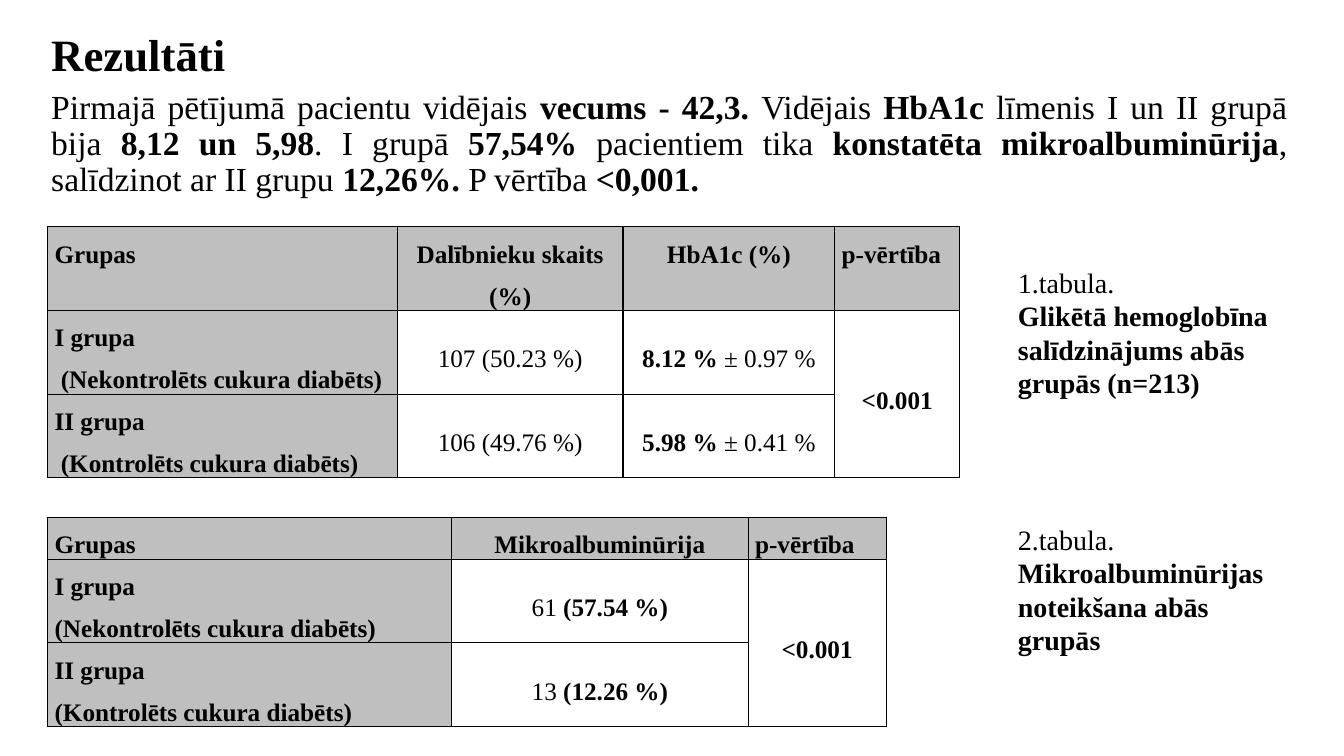
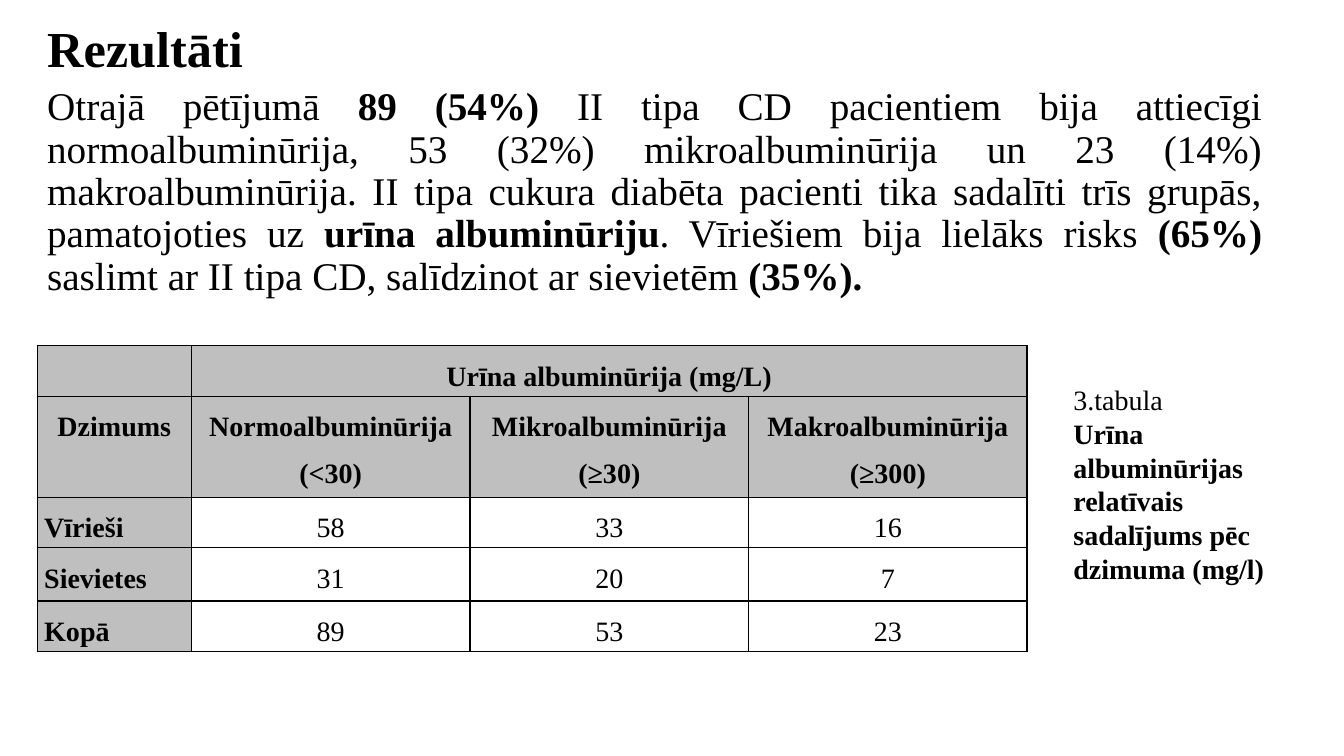
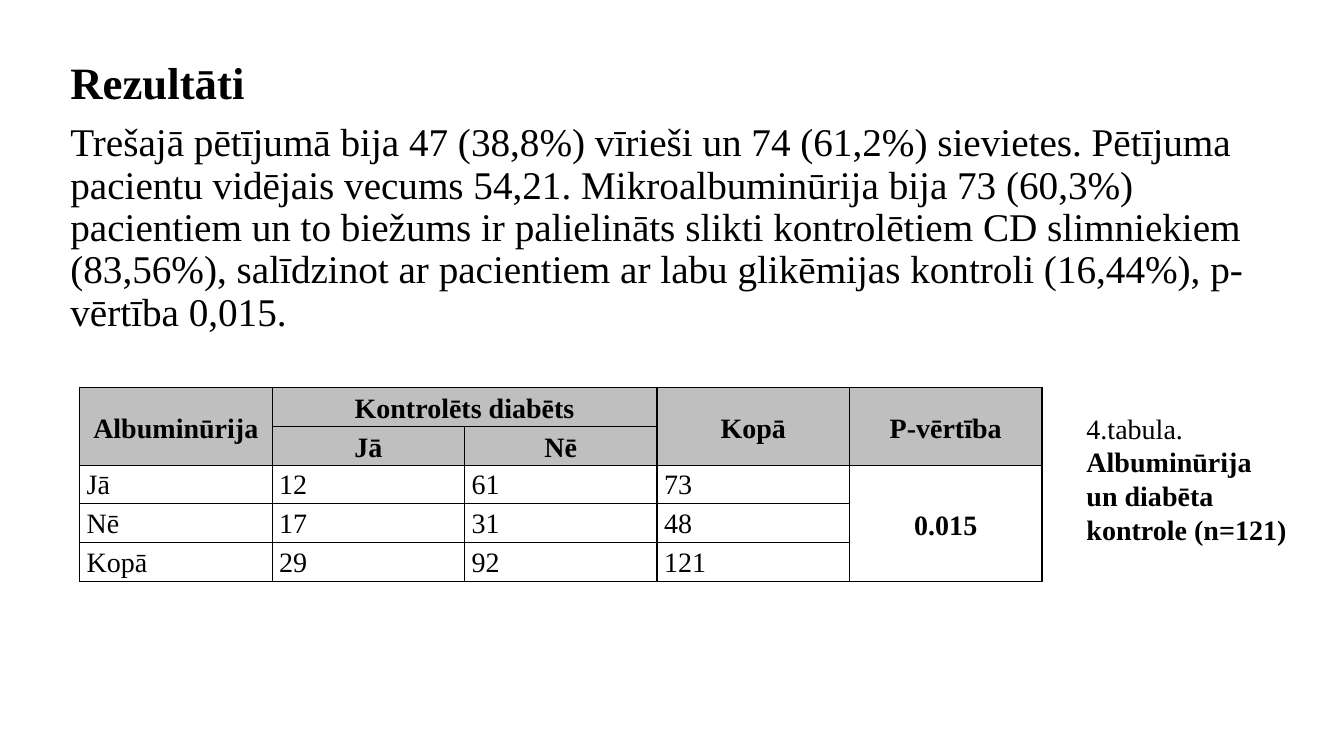
from dataclasses import dataclass
from typing import Any, Optional

from lxml.etree import SubElement
from pptx import Presentation
from pptx.dml.color import RGBColor
from pptx.enum.text import MSO_ANCHOR as Anchor, MSO_AUTO_SIZE as AutoSize, PP_ALIGN as Align
from pptx.oxml.ns import qn
from pptx.util import Pt

BLACK = RGBColor(0, 0, 0)
WHITE = RGBColor(255, 255, 255)
GRAY = RGBColor(0xBF, 0xBF, 0xBF)
FONT = "Times New Roman"
TITLE = "Rezultāti"
BOLD_MARK = "*"
CELL_FORMAT = {"margin_left": Pt(5), "margin_right": Pt(5), "margin_top": 0, "margin_bottom": 0}
PLAIN_TABLE = {"first_row": False, "horz_banding": False}


@dataclass(frozen=True)
class Frame:
    left: float
    top: float
    width: float
    height: float

    def lengths(self) -> list[Pt]:
        return [Pt(value) for value in (self.left, self.top, self.width, self.height)]


@dataclass(frozen=True)
class Cell:
    text: str
    align: Align = Align.CENTER
    bold: bool = False
    fill: RGBColor = WHITE
    anchor: Anchor = Anchor.TOP
    rows: int = 1
    columns: int = 1


@dataclass(frozen=True)
class Grid:
    frame: Frame
    widths: list[float]
    heights: list[float]
    size: float
    spacing: float
    cells: list[list[Optional[Cell]]]


@dataclass(frozen=True)
class Caption:
    frame: Frame
    text: str


@dataclass(frozen=True)
class Page:
    frame: Frame
    title_size: float
    body: str
    body_size: float
    body_format: dict[str, Any]
    grids: list[Grid]
    captions: list[Caption]


def head(text: str, align: Align = Align.CENTER, **extra: Any) -> Cell:
    return Cell(text, align, True, GRAY, **extra)


def stub(text: str) -> Cell:
    return head(text, Align.JUSTIFY)


def middle(text: str, **extra: Any) -> Cell:
    return Cell(text, anchor=Anchor.MIDDLE, **extra)


def middle_head(text: str, **extra: Any) -> Cell:
    return head(text, anchor=Anchor.MIDDLE, **extra)


def assign(target: Any, values: dict[str, Any]) -> None:
    for name, value in values.items():
        setattr(target, name, value)


def write_para(para: Any, text: str, size: float, bold: bool, values: dict[str, Any]) -> None:
    assign(para, values)
    for index, part in enumerate(text.split(BOLD_MARK)):
        if part:
            span = para.add_run()
            span.text = part
            marked = index % 2 == 1
            assign(span.font, {"name": FONT, "size": Pt(size), "bold": bold != marked})
            span.font.color.rgb = BLACK


def write_lines(frame: Any, text: str, size: float, bold: bool, values: dict[str, Any]) -> None:
    for index, line in enumerate(text.split("\n")):
        para = frame.add_paragraph() if index else frame.paragraphs[0]
        write_para(para, line, size, bold, values)


def add_box(slide: Any, frame: Frame, auto_size: AutoSize) -> Any:
    box = slide.shapes.add_textbox(*frame.lengths())
    assign(box.text_frame, {"word_wrap": True, "auto_size": auto_size})
    return box.text_frame


def add_borders(cell: Any) -> None:
    properties = cell._tc.get_or_add_tcPr()
    for index, side in enumerate(("lnL", "lnR", "lnT", "lnB")):
        line = SubElement(properties, qn(f"a:{side}"), w=str(Pt(1)))
        fill = SubElement(line, qn("a:solidFill"))
        SubElement(fill, qn("a:srgbClr"), val=str(BLACK))
        properties.remove(line)
        properties.insert(index, line)


def add_grid(slide: Any, grid: Grid) -> None:
    shape = slide.shapes.add_table(len(grid.heights), len(grid.widths), *grid.frame.lengths())
    table = shape.table
    assign(table, PLAIN_TABLE)
    for column, width in zip(table.columns, grid.widths):
        column.width = Pt(width)
    for row, height in zip(table.rows, grid.heights):
        row.height = Pt(height)
    for row_index, row_cells in enumerate(grid.cells):
        for column_index, content in enumerate(row_cells):
            cell = table.cell(row_index, column_index)
            assign(cell, CELL_FORMAT)
            cell.fill.solid()
            cell.fill.fore_color.rgb = content.fill if content else WHITE
            add_borders(cell)
            if content is None:
                continue
            cell.vertical_anchor = content.anchor
            if content.rows * content.columns > 1:
                corner = table.cell(
                    row_index + content.rows - 1, column_index + content.columns - 1
                )
                cell.merge(corner)
            values = {"alignment": content.align, "line_spacing": grid.spacing}
            write_lines(cell.text_frame, content.text, grid.size, content.bold, values)


def add_page(deck: Any, page: Page) -> None:
    slide = deck.slides.add_slide(deck.slide_layouts[6])
    frame = add_box(slide, page.frame, AutoSize.NONE)
    title_format = {"alignment": Align.JUSTIFY, "line_spacing": 0.9, "space_before": Pt(6)}
    write_para(frame.paragraphs[0], TITLE, page.title_size, True, title_format)
    body_format = title_format | page.body_format
    write_para(frame.add_paragraph(), page.body, page.body_size, False, body_format)
    for grid in page.grids:
        add_grid(slide, grid)
    for caption in page.captions:
        caption_frame = add_box(slide, caption.frame, AutoSize.SHAPE_TO_FIT_TEXT)
        write_lines(caption_frame, caption.text, 20, False, {"alignment": Align.LEFT})


MICROALBUMINURIA = Grid(
    Frame(34, 369.5, 599, 162),
    [288.7, 211.7, 98.6],
    [25.2, 47.5, 47.5],
    18,
    1.5,
    [
        [stub("Grupas"), head("Mikroalbuminūrija"), stub("p-vērtība")],
        [
            stub("I grupa\n(Nekontrolēts cukura diabēts)"),
            middle("61 *(57.54 %)*"),
            middle("<0.001", bold=True, rows=2),
        ],
        [stub("II grupa\n(Kontrolēts cukura diabēts)"), middle("13 *(12.26 %)*"), None],
    ],
)

HEMOGLOBIN = Grid(
    Frame(34, 162, 651.6, 194.4),
    [249.8, 161.3, 151.2, 89.3],
    [55.4, 56.2, 56.2],
    18,
    1.5,
    [
        [stub("Grupas"), head("Dalībnieku skaits\n(%)"), head("HbA1c (%)"), stub("p-vērtība")],
        [
            stub("I grupa\n (Nekontrolēts cukura diabēts)"),
            middle("107 (50.23 %)"),
            middle("*8.12 %* ± 0.97 %"),
            middle("<0.001", bold=True, rows=2),
        ],
        [
            stub("II grupa\n (Kontrolēts cukura diabēts)"),
            middle("106 (49.76 %)"),
            middle("*5.98 %* ± 0.41 %"),
            None,
        ],
    ],
)

SEX_COUNTS = [
    ("Vīrieši", ("58", "33", "16")),
    ("Sievietes", ("31", "20", "7")),
    ("Kopā", ("89", "53", "23")),
]

ALBUMINURIA_BY_SEX = Grid(
    Frame(26.6, 247, 707, 218.2),
    [110.2, 198.9, 199.2, 198.7],
    [17.3, 47.5, 22.3, 38.2, 22.3],
    20,
    1.5,
    [
        [head(""), head("Urīna albuminūrija (mg/L)", columns=3), None, None],
        [
            head("Dzimums"),
            head("Normoalbuminūrija (<30)"),
            head("Mikroalbuminūrija (≥30)"),
            head("Makroalbuminūrija (≥300)"),
        ],
        *[[stub(name), *map(Cell, counts)] for name, counts in SEX_COUNTS],
    ],
)

CONTROL_COUNTS = [
    ("Jā", "12", "61", "73"),
    ("Nē", "17", "31", "48"),
    ("Kopā", "29", "92", "121"),
]

DIABETES_CONTROL = Grid(
    Frame(56.9, 277, 687.5, 138.2),
    [137.5] * 5,
    [26.1] * 5,
    20,
    1.15,
    [
        [
            middle_head("Albuminūrija", rows=2),
            middle_head("Kontrolēts diabēts", columns=2),
            None,
            middle_head("Kopā", rows=2),
            middle_head("P-vērtība", rows=2),
        ],
        [None, middle_head("Jā"), middle_head("Nē"), None, None],
        *[
            [
                *[Cell(text, Align.JUSTIFY) for text in counts],
                None if index else middle("0.015", bold=True, rows=3),
            ]
            for index, counts in enumerate(CONTROL_COUNTS)
        ],
    ],
)

PAGES = [
    Page(
        Frame(29.5, 20.2, 897, 466),
        32,
        "Pirmajā pētījumā pacientu vidējais *vecums - 42,3. *Vidējais *HbA1c* līmenis "
        "I un II grupā bija *8,12 un 5,98*. I grupā *57,54%* pacientiem tika "
        "*konstatēta mikroalbuminūrija*, salīdzinot ar II grupu *12,26%. *"
        "P vērtība *<0,001.*",
        24,
        {},
        [MICROALBUMINURIA, HEMOGLOBIN],
        [
            Caption(
                Frame(720, 185.8, 194.4, 104.4),
                "1.tabula.\n*Glikētā hemoglobīna salīdzinājums abās grupās (n=213)*",
            ),
            Caption(
                Frame(720, 369.4, 194.4, 104.4),
                "2.tabula. *Mikroalbuminūrijas noteikšana abās grupās*",
            ),
        ],
    ),
    Page(
        Frame(26.6, 13.7, 882, 465),
        36,
        "Otrajā pētījumā *89 (54%) *II tipa CD pacientiem bija attiecīgi "
        "normoalbuminūrija, 53 (32%) mikroalbuminūrija un 23 (14%) makroalbuminūrija. "
        "II tipa cukura diabēta pacienti tika sadalīti trīs grupās, pamatojoties uz "
        "*urīna albuminūriju*. Vīriešiem bija lielāks risks *(65%) *saslimt ar "
        "II tipa CD, salīdzinot ar sievietēm *(35%).*",
        28,
        {},
        [ALBUMINURIA_BY_SEX],
        [
            Caption(
                Frame(759.6, 270, 173.5, 152.6),
                "3.tabula\n*Urīna albuminūrijas relatīvais sadalījums pēc dzimuma (mg/l)*",
            )
        ],
    ),
    Page(
        Frame(43.2, 39.6, 870.5, 446.4),
        32,
        "Trešajā pētījumā bija 47 (38,8%) vīrieši un 74 (61,2%) sievietes. Pētījuma "
        "pacientu vidējais vecums 54,21. Mikroalbuminūrija bija 73 (60,3%) pacientiem "
        "un to biežums ir palielināts slikti kontrolētiem CD slimniekiem (83,56%), "
        "salīdzinot ar pacientiem ar labu glikēmijas kontroli (16,44%), p-vērtība 0,015.",
        28,
        {"alignment": Align.LEFT, "space_before": Pt(10)},
        [DIABETES_CONTROL],
        [
            Caption(
                Frame(769, 290.2, 158.4, 104.4),
                "4.tabula. *Albuminūrija un diabēta kontrole (n=121)*",
            )
        ],
    ),
]


def main() -> None:
    deck = Presentation()
    assign(deck, {"slide_width": Pt(960), "slide_height": Pt(540)})
    for page in PAGES:
        add_page(deck, page)
    deck.save("out.pptx")


if __name__ == "__main__":
    main()
